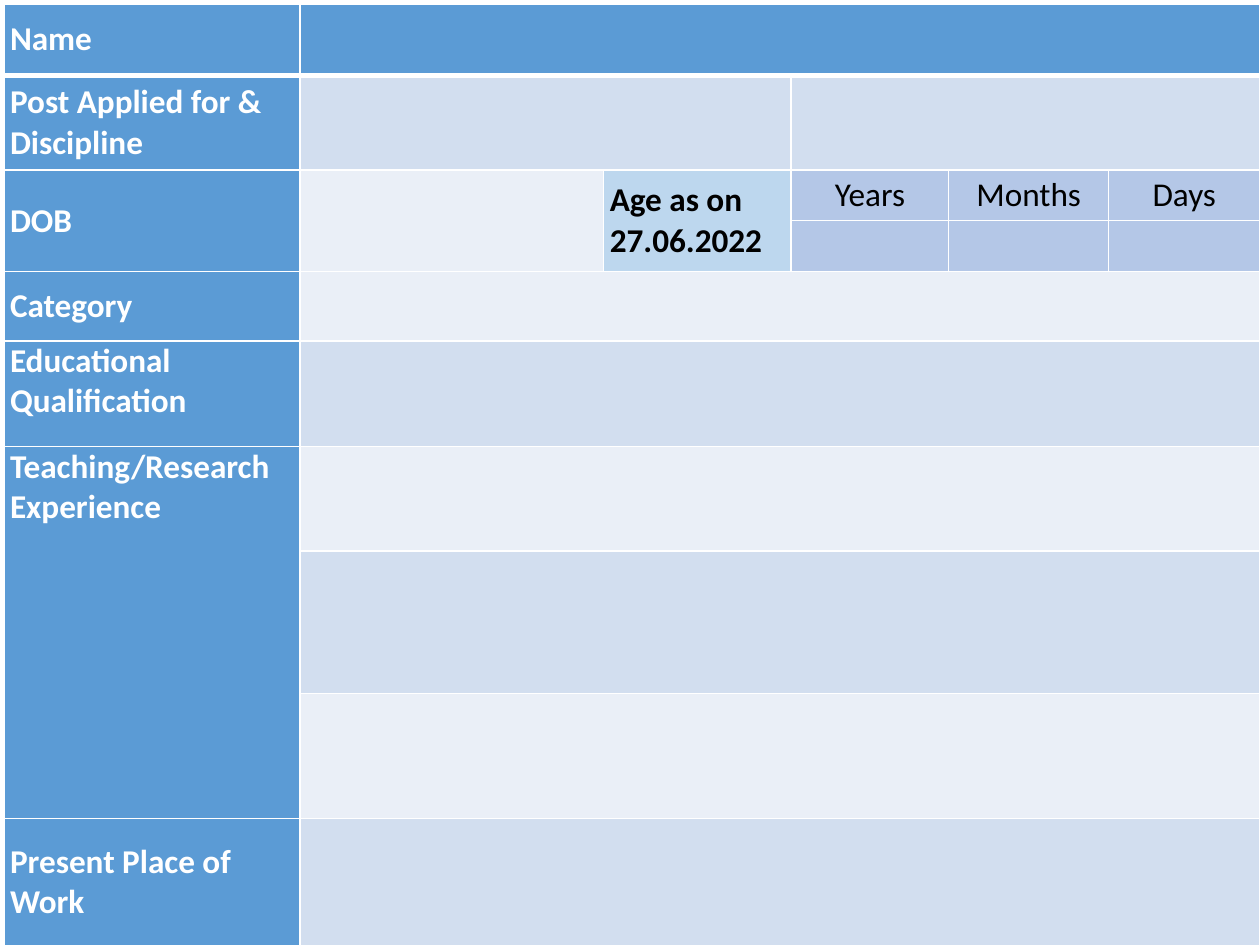
from dataclasses import dataclass

from lxml.etree import SubElement
from pptx import Presentation
from pptx.dml.color import RGBColor
from pptx.enum.text import MSO_ANCHOR, PP_ALIGN
from pptx.oxml.ns import qn
from pptx.util import Inches, Pt


@dataclass(frozen=True)
class Theme:
    font: str = "Calibri"
    size: float = 19
    label: str = "5B9BD5"
    band_dark: str = "D2DEEF"
    band_light: str = "EAEFF7"
    age: str = "BDD7EE"
    age_parts: str = "B4C7E7"
    white: str = "FFFFFF"
    black: str = "000000"
    rule: float = 1
    header_rule: float = 3


THEME = Theme()
EDGE = 0.03
COLUMNS = [2.35, 2.41, 1.49, 1.25, 1.27, 1.2]
ROWS = [0.57, 0.75, 0.4, 0.4, 0.55, 0.84, 0.83, 1.13, 0.99, 1.01]

# row, rows spanned, text, anchor
LABELS = [
    (0, 1, "Name", MSO_ANCHOR.MIDDLE),
    (1, 1, "Post Applied for &\nDiscipline", MSO_ANCHOR.MIDDLE),
    (2, 2, "DOB", MSO_ANCHOR.MIDDLE),
    (4, 1, "Category", MSO_ANCHOR.MIDDLE),
    (5, 1, "Educational Qualification", MSO_ANCHOR.TOP),
    (6, 3, "Teaching/Research Experience", MSO_ANCHOR.TOP),
    (9, 1, "Present Place of Work", MSO_ANCHOR.MIDDLE),
]
# row, column, rows spanned, columns spanned, fill
ANSWERS = [
    (0, 1, 1, 5, THEME.label),
    (1, 1, 1, 2, THEME.band_dark),
    (1, 3, 1, 3, THEME.band_dark),
    (2, 1, 2, 1, THEME.band_light),
    (4, 1, 1, 5, THEME.band_light),
    (5, 1, 1, 5, THEME.band_dark),
    (6, 1, 1, 5, THEME.band_light),
    (7, 1, 1, 5, THEME.band_dark),
    (8, 1, 1, 5, THEME.band_light),
    (9, 1, 1, 5, THEME.band_dark),
]


def add_form(slide):
    form = slide.shapes.add_table(
        len(ROWS), len(COLUMNS), Inches(EDGE), Inches(EDGE),
        Inches(sum(COLUMNS)), Inches(sum(ROWS))).table
    for column, width in zip(form.columns, COLUMNS):
        column.width = Inches(width)
    for row, height in zip(form.rows, ROWS):
        row.height = Inches(height)
    return form


def draw_borders(form):
    """Rule every cell in white, heavier between the first two rows."""
    for row_index, row in enumerate(form.rows):
        widths = dict.fromkeys(("lnL", "lnR", "lnT", "lnB"), THEME.rule)
        if row_index == 0:
            widths["lnB"] = THEME.header_rule
        elif row_index == 1:
            widths["lnT"] = THEME.header_rule
        for cell in row.cells:
            properties = cell._tc.get_or_add_tcPr()
            for side, width in widths.items():
                line = SubElement(properties, qn(f"a:{side}"), w=str(Pt(width)))
                solid = SubElement(line, qn("a:solidFill"))
                SubElement(solid, qn("a:srgbClr"), val=THEME.white)


def fill_area(form, row, column, rows, columns, color):
    """Merge and colour a block of cells; return its first cell."""
    first = form.cell(row, column)
    if rows * columns > 1:
        first.merge(form.cell(row + rows - 1, column + columns - 1))
    for r in range(row, row + rows):
        for c in range(column, column + columns):
            cell = form.cell(r, c)
            cell.fill.solid()
            cell.fill.fore_color.rgb = RGBColor.from_string(color)
    return first


def write(cell, text, color, bold=True, align=PP_ALIGN.LEFT,
          anchor=MSO_ANCHOR.MIDDLE):
    layout = {"margin_left": Inches(0.05), "margin_right": Inches(0.05),
              "margin_top": 0, "margin_bottom": 0, "vertical_anchor": anchor}
    for name, value in layout.items():
        setattr(cell, name, value)
    cell.text = text
    style = {"name": THEME.font, "size": Pt(THEME.size), "bold": bold}
    for paragraph in cell.text_frame.paragraphs:
        paragraph.alignment = align
        for run in paragraph.runs:
            for name, value in style.items():
                setattr(run.font, name, value)
            run.font.color.rgb = RGBColor.from_string(color)


def add_age(form):
    heading = fill_area(form, 2, 2, 2, 1, THEME.age)
    write(heading, "Age as on 27.06.2022", THEME.black)
    for column, unit in enumerate(("Years", "Months", "Days"), start=3):
        unit_cell = fill_area(form, 2, column, 1, 1, THEME.age_parts)
        write(unit_cell, unit, THEME.black, bold=False, align=PP_ALIGN.CENTER)
        fill_area(form, 3, column, 1, 1, THEME.age_parts)


def main():
    deck = Presentation()
    deck.slide_width, deck.slide_height = Inches(10), Inches(7.5)
    slide = deck.slides.add_slide(deck.slide_layouts[6])
    form = add_form(slide)
    draw_borders(form)
    for row, rows, text, anchor in LABELS:
        label = fill_area(form, row, 0, rows, 1, THEME.label)
        write(label, text, THEME.white, anchor=anchor)
    for answer in ANSWERS:
        fill_area(form, *answer)
    add_age(form)
    deck.save("out.pptx")


if __name__ == "__main__":
    main()
